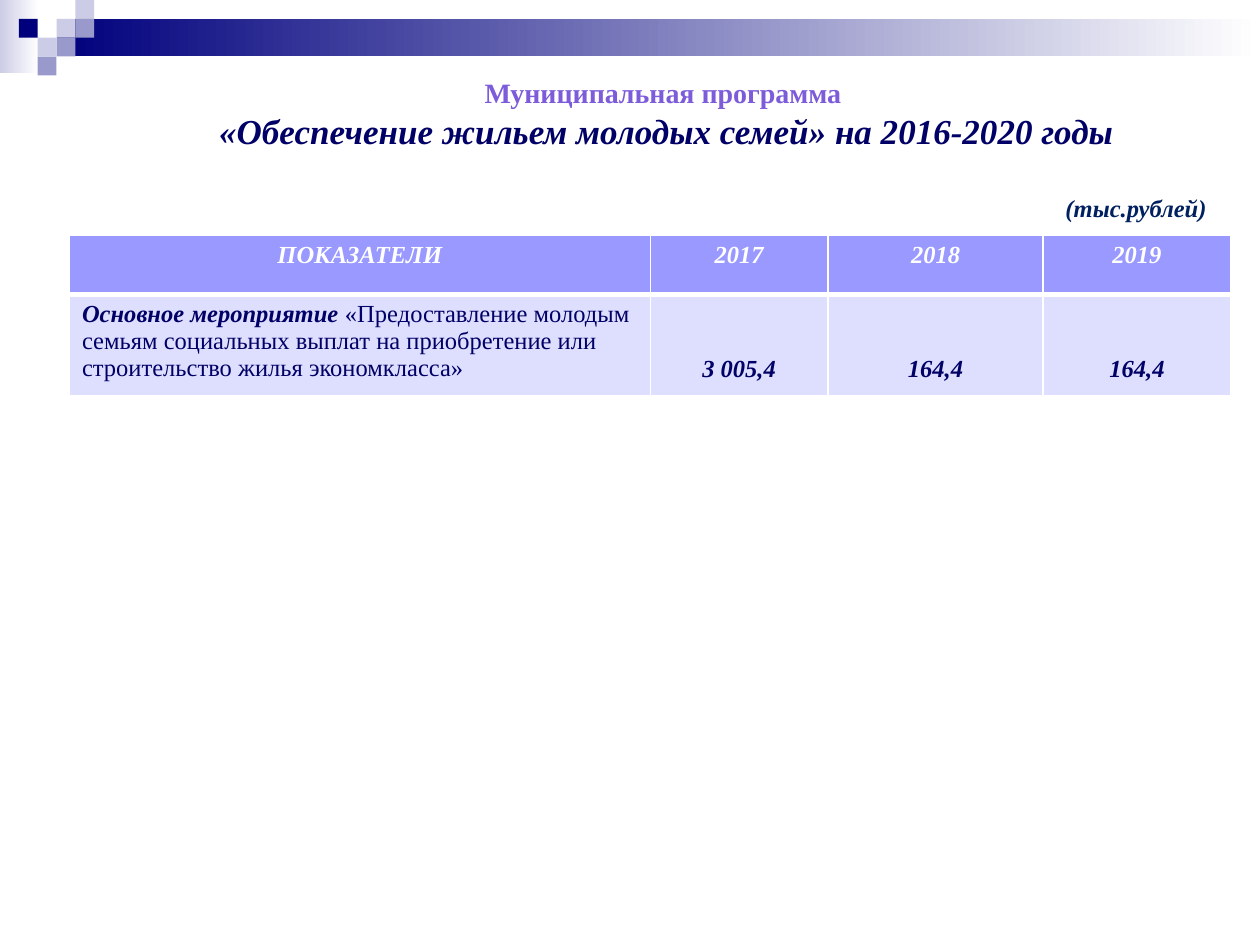
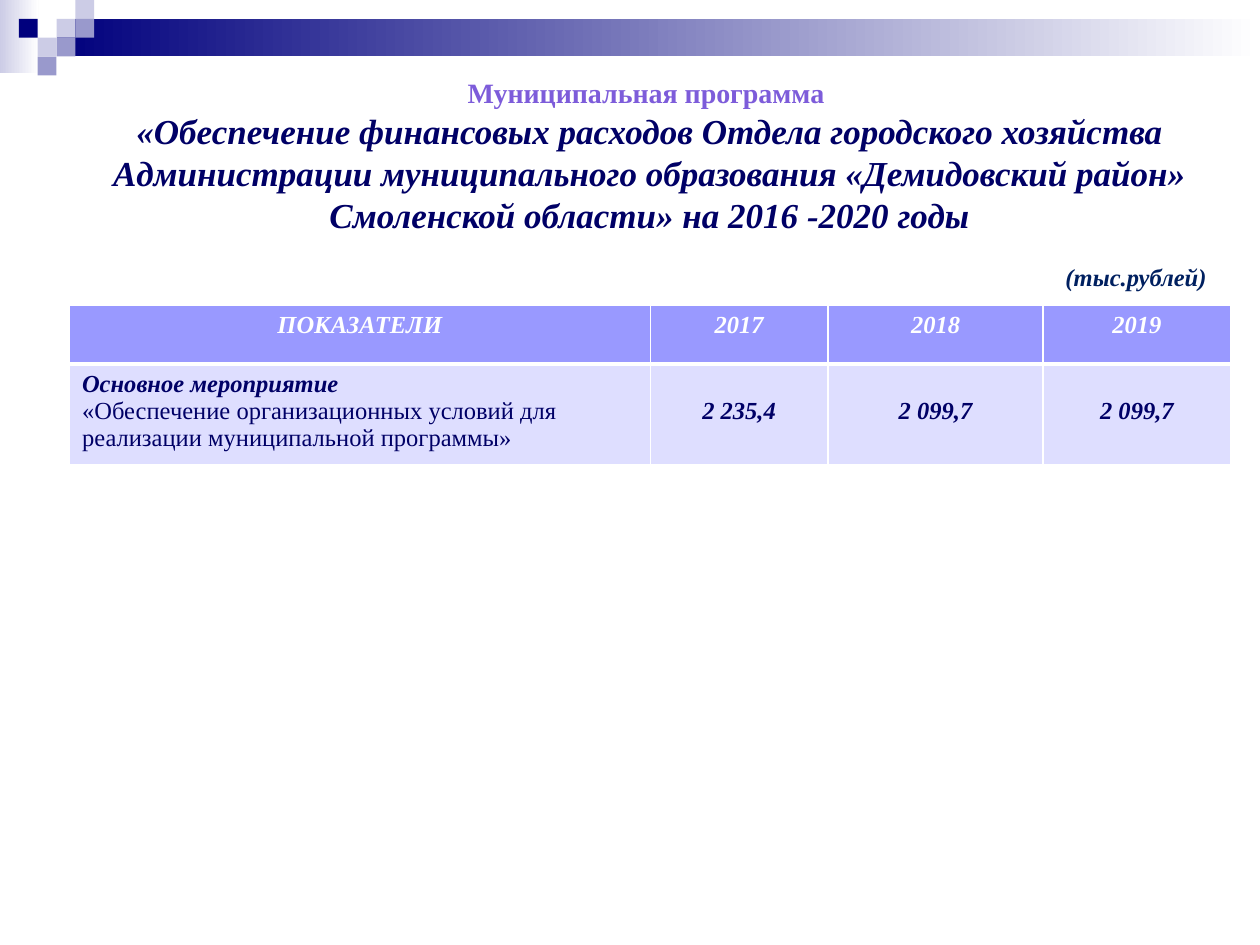
from pptx import Presentation
from pptx import util as u
from pptx.dml.color import RGBColor
from pptx.enum import shapes, text
from pptx.oxml import parse_xml
from pptx.oxml.ns import nsdecls

# Content
KICKER = "Муниципальная программа "
UNITS = "(тыс.рублей)"
HEADINGS = ["ПОКАЗАТЕЛИ", "2017", "2018", "2019"]
PROGRAMMES = [
    {
        "name": "«Обеспечение жильем молодых семей» на 2016-2020 годы",
        "title_box": (3.96, 1.4, 18.95, 1.8),
        "table_top": 4.75,
        "measure": [[("Основное мероприятие ", "lead"),
                     ("«Предоставление молодым семьям социальных выплат на "
                      "приобретение или строительство жилья экономкласса»", "body")]],
        "amounts": ["3 005,4", "164,4", "164,4"],
        "amount_line": 2,
    },
    {
        "name": "«Обеспечение финансовых расходов Отдела городского хозяйства "
                "Администрации муниципального образования «Демидовский район» "
                "Смоленской области» на 2016 -2020 годы",
        "title_box": (0.79, 1.4, 24.61, 3.5),
        "table_top": 6.15,
        "measure": [[("Основное мероприятие", "lead")],
                    [("«Обеспечение организационных условий для реализации "
                      "муниципальной программы»", "body")]],
        "amounts": ["2 235,4", "2 099,7", "2 099,7"],
        "amount_line": 1,
    },
]

# Theme: colours and type styles
THEME = {
    "font": "Times New Roman",
    "navy": "00007D", "pale": "CCCCE6", "mid": "9999CC", "white": "FFFFFF",
    "header_fill": "9999FF", "body_fill": "DEDEFF",
    "styles": {
        "kicker": ("7D5CDA", {"size": u.Pt(16), "bold": True, "italic": False}),
        "name": ("000066", {"size": u.Pt(20), "bold": True, "italic": True}),
        "units": ("002060", {"size": u.Pt(14), "bold": True, "italic": True}),
        "heading": ("FFFFFF", {"size": u.Pt(14), "bold": True, "italic": True}),
        "lead": ("000066", {"size": u.Pt(14), "bold": True, "italic": True}),
        "body": ("000066", {"size": u.Pt(14), "bold": False, "italic": False}),
    },
}
LEFT, CENTER = text.PP_ALIGN.LEFT, text.PP_ALIGN.CENTER

# Layout, in centimetres
SLIDE = (25.4, 19.05)
TILE = 0.38
TILES = [(3, 1, "pale"), (4, 0, "pale"), (4, 1, "mid"), (2, 2, "pale"),
         (1, 1, "navy"), (3, 2, "mid"), (2, 3, "mid")]
TABLE_LEFT = 1.4
COLUMNS = [11.71, 3.58, 4.34, 3.78]
ROWS = [1.19, 2.0]
CELL_TOP, LINE = 0.13, 0.55
UNITS_LEFT, UNITS_RISE, UNITS_SIZE = 21.23, 0.99, (3.38, 0.86)


def rgb(name):
    return RGBColor.from_string(THEME.get(name, name))


def write(frame, paragraphs, align):
    """Fill a text frame; each paragraph is a list of (words, style) pairs."""
    for index, runs in enumerate(paragraphs):
        paragraph = frame.add_paragraph() if index else frame.paragraphs[0]
        paragraph.alignment = align
        for words, style in runs:
            run = paragraph.add_run()
            run.text = words
            colour, values = THEME["styles"][style]
            for key, value in {"name": THEME["font"], **values}.items():
                setattr(run.font, key, value)
            run.font.color.rgb = rgb(colour)


def add_text(slide, box, paragraphs, align, wrap):
    frame = slide.shapes.add_textbox(*map(u.Cm, box)).text_frame
    frame.word_wrap = wrap
    frame.auto_size = text.MSO_AUTO_SIZE.SHAPE_TO_FIT_TEXT
    write(frame, paragraphs, align)


def add_block(band, box, *colours):
    """Rectangle with one colour, or fading between two."""
    block = band.shapes.add_shape(shapes.MSO_SHAPE.RECTANGLE, *map(u.Cm, box))
    block.shadow.inherit = False
    block.line.fill.background()
    if len(colours) == 1:
        block.fill.solid()
        block.fill.fore_color.rgb = rgb(colours[0])
        return
    block.fill.gradient()
    block.fill.gradient_angle = 0
    for stop, colour in zip(block.fill.gradient_stops, colours):
        stop.color.rgb = rgb(colour)


def add_band(slide):
    band = slide.shapes.add_group_shape()
    add_block(band, (0, 0, 0.78, 1.48), "pale", "white")
    add_block(band, (3 * TILE, TILE, SLIDE[0] - 3 * TILE, 2 * TILE), "navy", "white")
    for column, row, colour in TILES:
        add_block(band, (column * TILE, row * TILE, TILE, TILE), colour)


def style_cell(cell, fill, top, bottom):
    properties = cell._tc.get_or_add_tcPr()
    for side, width in {"L": 1, "R": 1, "T": top, "B": bottom}.items():
        properties.append(parse_xml(
            f'<a:ln{side} {nsdecls("a")} w="{u.Pt(width)}"><a:solidFill>'
            f'<a:srgbClr val="{THEME["white"]}"/></a:solidFill></a:ln{side}>'))
    cell.fill.solid()
    cell.fill.fore_color.rgb = rgb(fill)


def add_budget(slide, programme):
    box = (TABLE_LEFT, programme["table_top"], sum(COLUMNS), sum(ROWS))
    budget = slide.shapes.add_table(len(ROWS), len(COLUMNS), *map(u.Cm, box)).table
    budget.horz_banding = False
    for row, height in zip(budget.rows, ROWS):
        row.height = u.Cm(height)

    amounts = [None] + programme["amounts"]
    for index, (width, heading, amount) in enumerate(zip(COLUMNS, HEADINGS, amounts)):
        budget.columns[index].width = u.Cm(width)
        head, body = budget.cell(0, index), budget.cell(1, index)
        style_cell(head, "header_fill", 1, 3)
        style_cell(body, "body_fill", 3, 1)
        write(head.text_frame, [[(heading, "heading")]], CENTER)
        if amount is None:
            write(body.text_frame, programme["measure"], LEFT)
        else:
            # Amounts sit level with a chosen line of the measure
            body.margin_top = u.Cm(CELL_TOP + programme["amount_line"] * LINE)
            write(body.text_frame, [[(amount, "lead")]], CENTER)


def main():
    deck = Presentation()
    deck.slide_width, deck.slide_height = map(u.Cm, SLIDE)
    for programme in PROGRAMMES:
        slide = deck.slides.add_slide(deck.slide_layouts[6])
        add_band(slide)
        add_text(slide, programme["title_box"],
                 [[(KICKER, "kicker")], [(programme["name"], "name")]], CENTER, True)
        add_budget(slide, programme)
        units_top = programme["table_top"] - UNITS_RISE
        add_text(slide, (UNITS_LEFT, units_top, *UNITS_SIZE),
                 [[(UNITS, "units")]], LEFT, False)
    deck.save("out.pptx")


if __name__ == "__main__":
    main()
